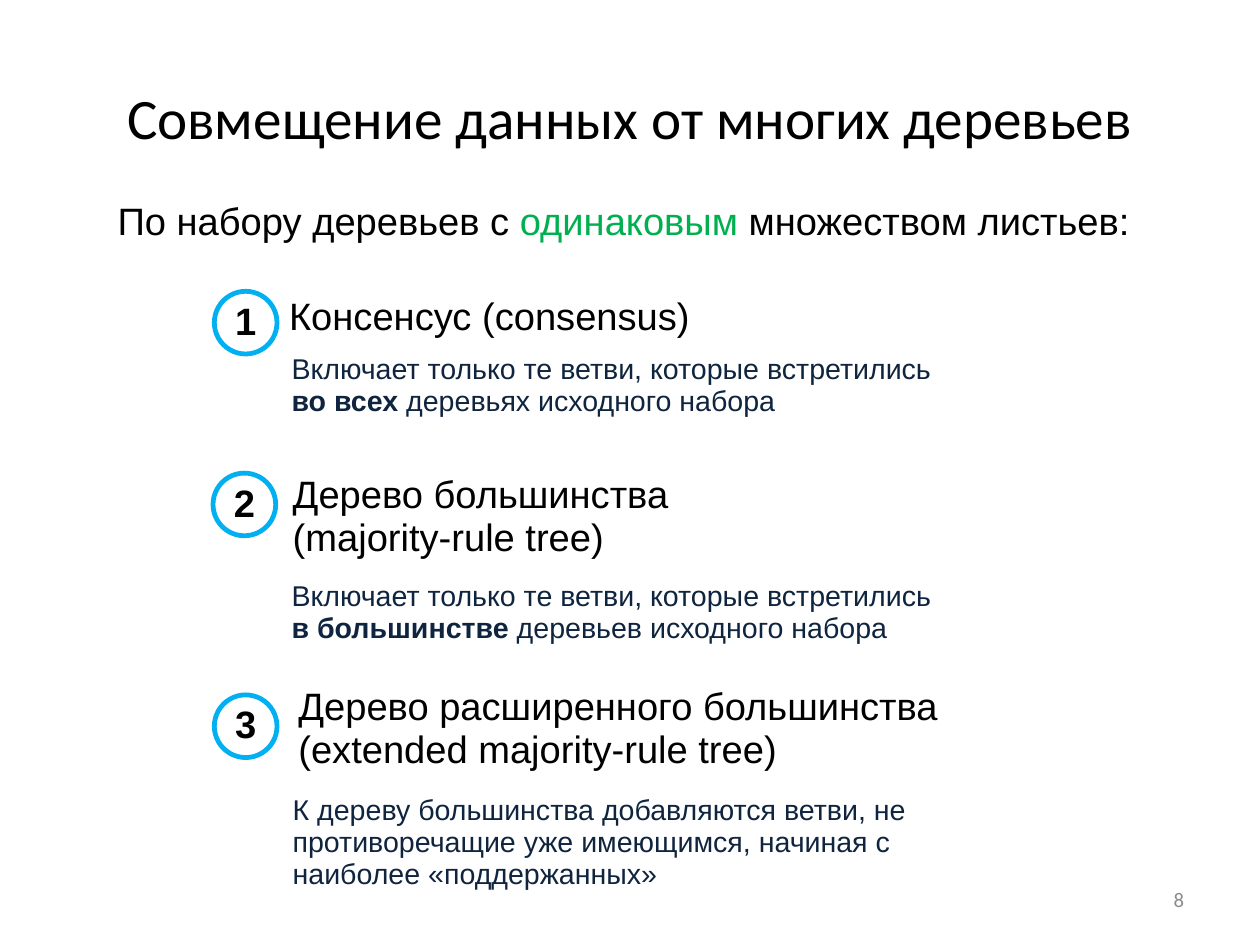
from dataclasses import dataclass

from pptx import Presentation
from pptx.dml.color import RGBColor
from pptx.enum.shapes import MSO_SHAPE
from pptx.enum.text import MSO_ANCHOR, PP_ALIGN
from pptx.util import Pt

ELLIPSE = MSO_SHAPE.OVAL
MIDDLE = MSO_ANCHOR.MIDDLE
LEFT, CENTER, RIGHT = PP_ALIGN.LEFT, PP_ALIGN.CENTER, PP_ALIGN.RIGHT


@dataclass(frozen=True)
class Theme:
    heading_font: str = "Calibri"
    body_font: str = "Arial"
    ink: RGBColor = RGBColor(0x00, 0x00, 0x00)
    paper: RGBColor = RGBColor(0xFF, 0xFF, 0xFF)
    navy: RGBColor = RGBColor(0x0F, 0x24, 0x3E)
    green: RGBColor = RGBColor(0x00, 0xB0, 0x50)
    ring: RGBColor = RGBColor(0x00, 0xB0, 0xF0)
    grey: RGBColor = RGBColor(0x8C, 0x8C, 0x8C)
    title_size: float = 36
    heading_size: float = 24
    detail_size: float = 18
    page_size: float = 13
    line_spacing: float = 0.93


THEME = Theme()
BADGE_SIZE = 39.5

# Per method: number, badge (left, top), heading text and box, space before,
# detail runs (text, bold) and box
METHODS = [
    ("1", (135, 183.5),
     "Консенсус (consensus)", (175, 183.2, 337.7, 36), 0,
     [("Включает только те ветви, которые встретились ", False),
      ("во всех ", True), ("деревьях исходного набора", False)],
     (176.6, 219.3, 424, 47.5)),
    ("2", (134.2, 298),
     "Дерево большинства (majority-rule tree)", (177.3, 295.6, 337.7, 65.5), 1,
     [("Включает только те ветви, которые встретились ", False),
      ("в большинстве ", True), ("деревьев исходного набора", False)],
     (176.6, 362.6, 418.3, 47.5)),
    ("3", (135, 437.7),
     "Дерево расширенного большинства (extended majority-rule tree)",
     (180.9, 429.1, 422.6, 65.5), 1,
     [("К дереву большинства добавляются ветви, не противоречащие уже "
       "имеющимся, начиная с наиболее «поддержанных»", False)],
     (177.3, 497.2, 429.1, 68.4)),
]


def style(paragraph, size, color, font=THEME.body_font, align=LEFT,
          spacing=THEME.line_spacing):
    paragraph.alignment = align
    paragraph.line_spacing = spacing
    paragraph.font.name = font
    paragraph.font.size = Pt(size)
    paragraph.font.color.rgb = color


def add_text(slide, box, text=""):
    """Add a wrapping text box and return its frame and first paragraph."""
    frame = slide.shapes.add_textbox(*map(Pt, box)).text_frame
    frame.word_wrap = True
    paragraph = frame.paragraphs[0]
    if text:
        paragraph.add_run().text = text
    return frame, paragraph


def set_title(slide, text):
    title = slide.shapes.title
    title.left, title.top, title.width, title.height = map(
        Pt, (39.6, 23.8, 714.2, 99.4))
    title.text_frame.text = text
    title.text_frame.vertical_anchor = MIDDLE
    style(title.text_frame.paragraphs[0], THEME.title_size, THEME.ink,
          THEME.heading_font, CENTER, 1.0)


def add_lead(slide):
    _, lead = add_text(slide, (67, 123.4, 684, 34.6))
    style(lead, THEME.heading_size, THEME.ink)
    for text, color in (("По набору деревьев с ", THEME.ink),
                        ("одинаковым ", THEME.green),
                        ("множеством листьев:", THEME.ink)):
        run = lead.add_run()
        run.text = text
        run.font.color.rgb = color


def add_badge(slide, number, left, top):
    badge = slide.shapes.add_shape(
        ELLIPSE, Pt(left), Pt(top), Pt(BADGE_SIZE), Pt(BADGE_SIZE))
    badge.shadow.inherit = False
    badge.fill.solid()
    badge.fill.fore_color.rgb = THEME.paper
    badge.line.color.rgb = THEME.ring
    badge.line.width = Pt(3)
    frame = badge.text_frame
    frame.margin_left = frame.margin_right = 0
    frame.margin_top = frame.margin_bottom = 0
    frame.vertical_anchor = MIDDLE
    frame.word_wrap = False
    frame.text = number
    style(frame.paragraphs[0], THEME.heading_size, THEME.ink, align=CENTER)
    frame.paragraphs[0].font.bold = True


def add_method(slide, number, corner, heading, heading_box, space_before,
               detail_runs, detail_box):
    add_badge(slide, number, *corner)
    _, heading_line = add_text(slide, heading_box, heading)
    style(heading_line, THEME.heading_size, THEME.ink)
    heading_line.space_before = Pt(space_before)
    _, detail = add_text(slide, detail_box)
    style(detail, THEME.detail_size, THEME.navy)
    for text, bold in detail_runs:
        run = detail.add_run()
        run.text = text
        run.font.bold = bold


def add_page_number(slide, number):
    frame, page = add_text(slide, (568.8, 550.8, 185, 31.7), number)
    frame.vertical_anchor = MIDDLE
    frame.margin_right = Pt(7.9)
    style(page, THEME.page_size, THEME.grey, THEME.heading_font, RIGHT, 1.0)


def main():
    deck = Presentation()
    deck.slide_width, deck.slide_height = Pt(793.75), Pt(595.25)
    slide = deck.slides.add_slide(deck.slide_layouts[5])
    set_title(slide, "Совмещение данных от многих деревьев")
    add_lead(slide)
    for method in METHODS:
        add_method(slide, *method)
    add_page_number(slide, "8")
    deck.save("out.pptx")


if __name__ == "__main__":
    main()
